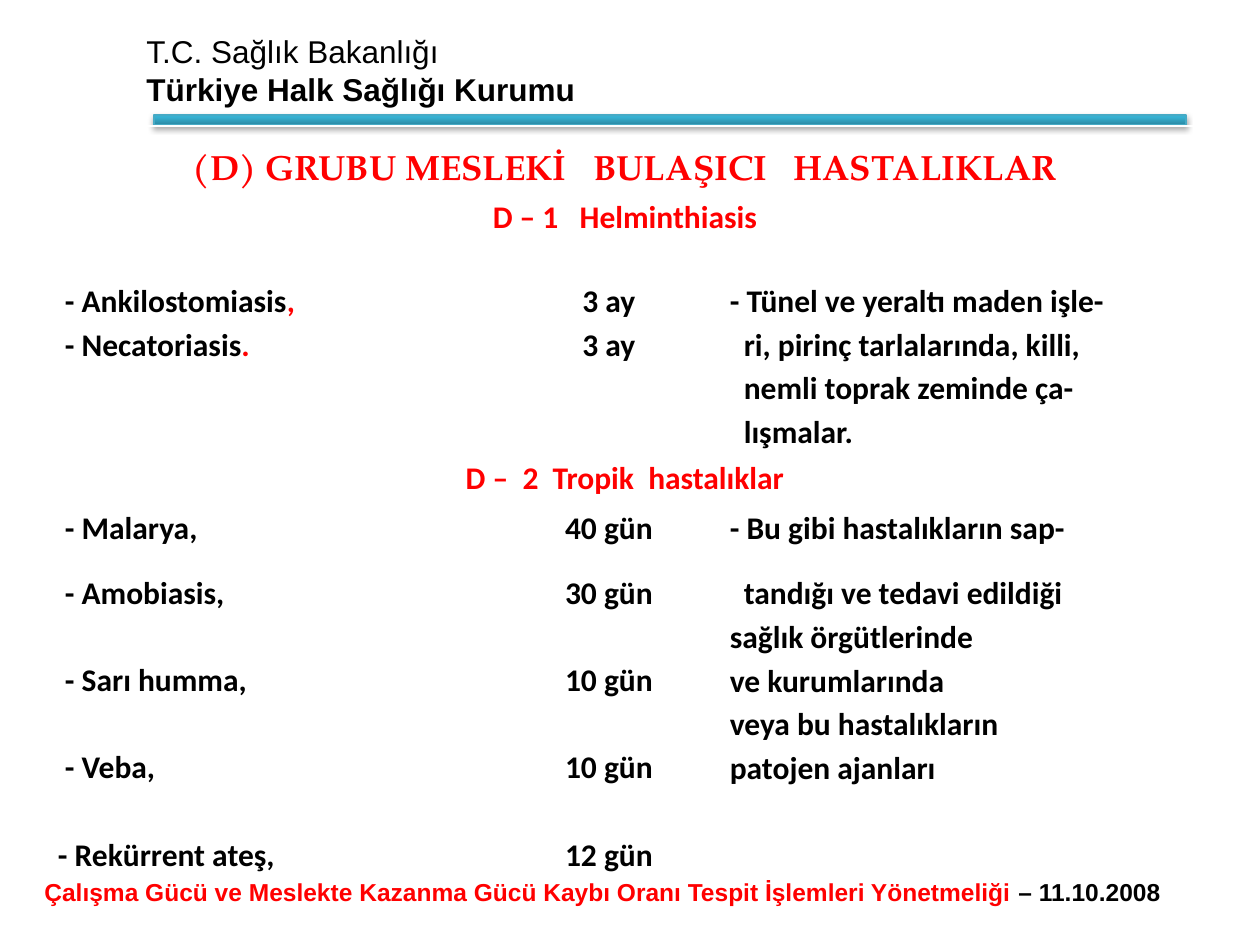
from copy import deepcopy
from lxml import etree
from pptx import Presentation
from pptx.dml.color import RGBColor
from pptx.enum.shapes import MSO_SHAPE
from pptx.enum.text import MSO_ANCHOR, PP_ALIGN
from pptx.oxml.ns import qn
from pptx.util import Pt

PX = 914400 / 126
RED = RGBColor(0xFF, 0x00, 0x00)
BLACK = RGBColor(0x00, 0x00, 0x00)
RULE_EDGE = RGBColor(0x46, 0xAA, 0xC5)
RULE_DARK = RGBColor(0x2A, 0x88, 0xA2)
RULE_LIGHT = RGBColor(0x37, 0xB1, 0xD2)
RULE_END = RGBColor(0x34, 0xB4, 0xD6)


def emu(*lengths):
    return [round(length * PX) for length in lengths]


def add_run(paragraph, text, color, size, family, bold=True):
    run = paragraph.add_run()
    run.text = text
    formats = {"size": Pt(size), "name": family, "bold": bold}
    for key, value in formats.items():
        setattr(run.font, key, value)
    run.font.color.rgb = color
    return run


prs = Presentation()
prs.slide_width, prs.slide_height = emu(1260, 945)
slide = prs.slides.add_slide(prs.slide_layouts[6])

institution = slide.shapes.add_textbox(*emu(134, 26, 863, 89)).text_frame
institution.word_wrap = True
add_run(institution.paragraphs[0], "T.C. Sağlık Bakanlığı", BLACK, 18, "Arial", False)
add_run(institution.add_paragraph(), "Türkiye Halk Sağlığı Kurumu", BLACK, 18, "Arial")

rule = slide.shapes.add_shape(MSO_SHAPE.RECTANGLE, *emu(154, 115, 1032, 10))
rule.shadow.inherit = False
rule.line.color.rgb = RULE_EDGE
rule.line.width = Pt(0.75)
rule.fill.gradient()
rule.fill.gradient_angle = 90
stop_list = rule._element.spPr.find(".//" + qn("a:gsLst"))
stop_list.append(deepcopy(stop_list[-1]))
stops = [(0, RULE_DARK), (0.8, RULE_LIGHT), (1, RULE_END)]
for stop, (position, color) in zip(rule.fill.gradient_stops, stops):
    stop.position = position
    stop.color.rgb = color
effects = rule._element.spPr.find(qn("a:effectLst"))
shadow = etree.SubElement(effects, qn("a:outerShdw"), blurRad="40000", dist="23000",
                          dir="5400000", rotWithShape="0")
shade = etree.SubElement(shadow, qn("a:srgbClr"), val="000000")
etree.SubElement(shade, qn("a:alpha"), val="35000")

column_widths = [447, 26, 166, 26, 479, 18, 14]
row_heights = [64, 47] + [40] * 5 + [47, 50, 65, 68, 64, 110]
diseases = slide.shapes.add_table(
    len(row_heights), len(column_widths),
    *emu(53, 126, sum(column_widths), sum(row_heights))).table
diseases.first_row = False
diseases.horz_banding = False
for column, width in zip(diseases.columns, emu(*column_widths)):
    column.width = width
for row, height in zip(diseases.rows, emu(*row_heights)):
    row.height = height

cell_format = {"margin_left": emu(5)[0], "margin_right": emu(5)[0], "margin_top": 0,
               "margin_bottom": 0, "vertical_anchor": MSO_ANCHOR.BOTTOM}
for cell in diseases.iter_cells():
    cell.fill.background()
    for key, value in cell_format.items():
        setattr(cell, key, value)
    cell.text_frame.paragraphs[0]._p.get_or_add_endParaRPr().set("sz", "800")

headings = [
    (0, "TeX Gyre Pagella", 20, 10, ["(D) GRUBU MESLEKİ", "BULAŞICI", "HASTALIKLAR"]),
    (1, "Calibri", 18, 8, ["D – 1", "Helminthiasis"]),
    (7, "Calibri", 18, 4, ["D –", "2", "Tropik", "hastalıklar"]),
]
for row, family, size, gap, parts in headings:
    diseases.cell(row, 0).merge(diseases.cell(row, 4))
    heading = diseases.cell(row, 0).text_frame.paragraphs[0]
    heading.alignment = PP_ALIGN.CENTER
    heading.line_spacing = 1.15
    for index, part in enumerate(parts):
        if index:
            space = add_run(heading, " ", RED, size, family)
            space.font._element.set("spc", str(gap * 100))
        add_run(heading, part, RED, size, family)

BASE, HANGING = 7, 21
entries = [
    (3, 0, BASE, ["- Ankilostomiasis"], ","),
    (3, 2, 0, ["3 ay"], ""),
    (3, 4, BASE, ["- Tünel ve yeraltı maden işle-"], ""),
    (4, 0, BASE, ["- Necatoriasis"], "."),
    (4, 2, 0, ["3 ay"], ""),
    (4, 4, HANGING, ["ri, pirinç tarlalarında, killi,"], ""),
    (5, 4, HANGING, ["nemli toprak zeminde ça-"], ""),
    (6, 4, HANGING, ["lışmalar."], ""),
    (8, 0, BASE, ["- Malarya,"], ""),
    (8, 2, 0, ["40 gün"], ""),
    (8, 4, BASE, ["- Bu gibi hastalıkların sap-"], ""),
    (9, 0, BASE, ["- Amobiasis,"], ""),
    (9, 2, 0, ["30 gün"], ""),
    (9, 4, HANGING, ["tandığı ve tedavi edildiği"], ""),
    (10, 0, BASE, ["- Sarı humma,"], ""),
    (10, 2, 0, ["10 gün"], ""),
    (10, 4, BASE, ["sağlık örgütlerinde", "ve kurumlarında"], ""),
    (11, 0, BASE, ["- Veba,"], ""),
    (11, 2, 0, ["10 gün"], ""),
    (11, 4, BASE, ["veya bu hastalıkların", "patojen ajanları"], ""),
    (12, 0, 0, ["- Rekürrent ateş,"], ""),
    (12, 2, 0, ["12 gün"], ""),
]
for row, column, indent, lines, red_mark in entries:
    cell = diseases.cell(row, column)
    if row == 12:
        cell.margin_bottom = emu(22)[0]
    for index, line in enumerate(lines):
        frame = cell.text_frame
        paragraph = frame.add_paragraph() if index else frame.paragraphs[0]
        paragraph.line_spacing = 1.15
        paragraph.alignment = PP_ALIGN.CENTER if column == 2 else PP_ALIGN.LEFT
        paragraph._p.get_or_add_pPr().set("marL", str(emu(indent)[0]))
        add_run(paragraph, line, BLACK, 18, "Calibri")
        if red_mark:
            add_run(paragraph, red_mark, RED, 18, "Calibri")

regulation = slide.shapes.add_textbox(*emu(32, 871, 1207, 43)).text_frame
regulation.word_wrap = True
citation = regulation.paragraphs[0]
add_run(citation, "Çalışma Gücü ve Meslekte Kazanma Gücü Kaybı Oranı Tespit İşlemleri Yönetmeliği ",
        RED, 14, "Arial")
add_run(citation, "– 11.10.2008", BLACK, 14, "Arial")

prs.save("out.pptx")
